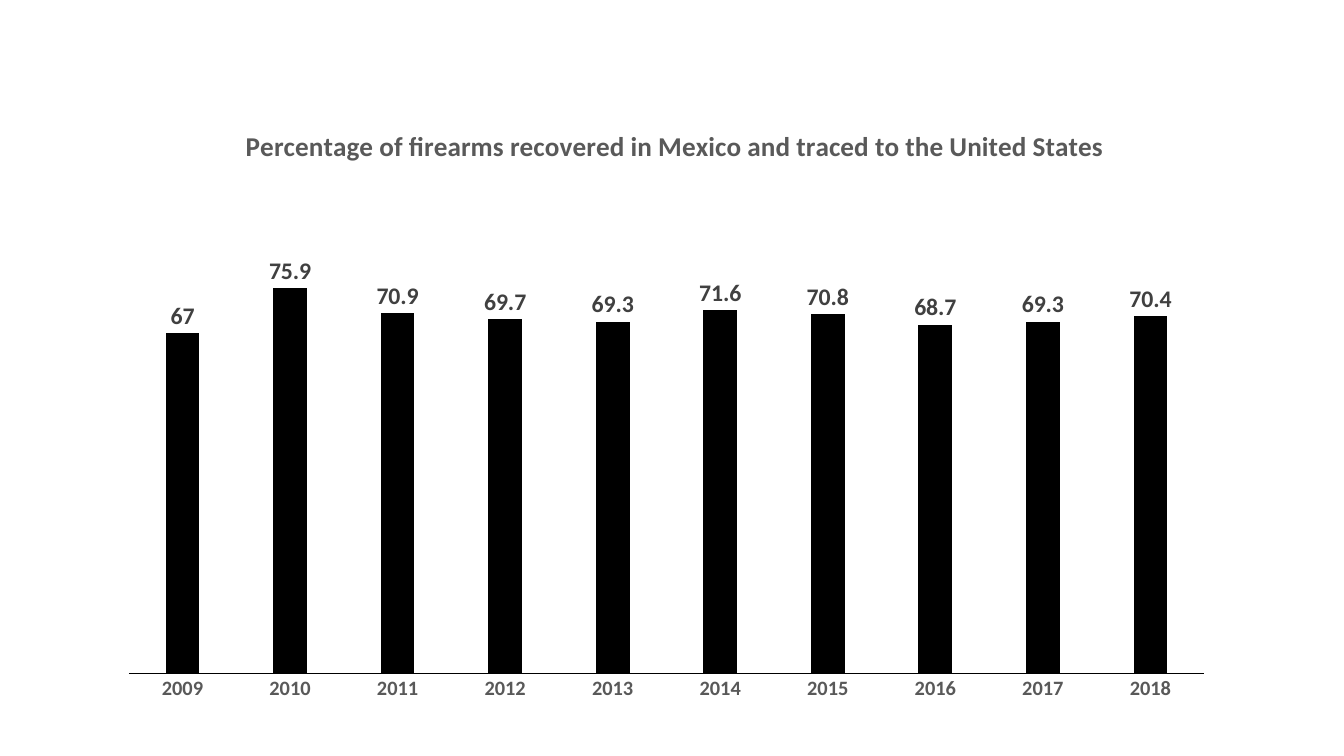
from lxml import etree
from pptx import Presentation
from pptx.chart.data import CategoryChartData
from pptx.dml.color import RGBColor
from pptx.enum.chart import XL_CHART_TYPE, XL_LABEL_POSITION, XL_TICK_LABEL_POSITION, XL_TICK_MARK
from pptx.oxml.ns import qn
from pptx.util import Pt

COLUMNS = XL_CHART_TYPE.COLUMN_CLUSTERED
OUTSIDE_END = XL_LABEL_POSITION.OUTSIDE_END
NO_LABELS = XL_TICK_LABEL_POSITION.NONE
NO_TICKS = XL_TICK_MARK.NONE

TITLE = "Percentage of firearms recovered in Mexico and traced to the United States"
YEARS = [str(year) for year in range(2009, 2019)]
PERCENTAGES = [67, 75.9, 70.9, 69.7, 69.3, 71.6, 70.8, 68.7, 69.3, 70.4]


def color(hex_code):
    return RGBColor.from_string(hex_code)


def style(font, size, hex_code, bold=False):
    font.name = "Calibri"
    font.size = Pt(size)
    font.bold = bold
    font.color.rgb = color(hex_code)


def write(text_frame, text, **font_format):
    text_frame.text = text
    style(text_frame.paragraphs[0].runs[0].font, **font_format)


def set_layout(part, index, **settings):
    for layout in part.findall(qn("c:layout")):
        part.remove(layout)
    layout = etree.Element(qn("c:layout"))
    manual = etree.SubElement(layout, qn("c:manualLayout"))
    for tag, value in settings.items():
        etree.SubElement(manual, qn(f"c:{tag}")).set("val", str(value))
    part.insert(index, layout)


def add_percentage_chart(slide, left, top, width, height):
    chart_data = CategoryChartData()
    chart_data.categories = YEARS
    chart_data.add_series("Series 1", PERCENTAGES)
    chart = slide.shapes.add_chart(
        COLUMNS, Pt(left), Pt(top), Pt(width), Pt(height), chart_data).chart
    chart.has_legend = False
    style(chart.font, 10, "000000")

    title = chart.chart_title
    write(title.text_frame, TITLE, size=32, hex_code="595959", bold=True)
    title.include_in_layout = False
    set_layout(title._element, 1, xMode="edge", yMode="edge", x=0.12, y=0.04)
    set_layout(chart._chartSpace.chart.plotArea, 0, layoutTarget="inner",
               xMode="edge", yMode="edge", x=0.02, y=0.11, w=0.96, h=0.825)

    year_axis = chart.category_axis
    year_axis.major_tick_mark = NO_TICKS
    year_axis.format.line.color.rgb = color("000000")
    year_axis.format.line.width = Pt(0.75)
    style(year_axis.tick_labels.font, 24, "595959", bold=True)

    percent_axis = chart.value_axis
    percent_axis.minimum_scale = 0
    percent_axis.maximum_scale = 100
    percent_axis.major_unit = 20
    percent_axis.has_major_gridlines = False
    percent_axis.tick_label_position = NO_LABELS
    percent_axis.visible = False

    columns = chart.plots[0]
    columns.vary_by_categories = False
    columns.gap_width = 219
    columns.overlap = -27
    column_fill = columns.series[0].format.fill
    column_fill.solid()
    column_fill.fore_color.rgb = color("000000")

    percentages = columns.series[0].data_labels
    percentages.show_value = True
    percentages.position = OUTSIDE_END
    style(percentages.font, 28, "404040", bold=True)


def main():
    presentation = Presentation()
    presentation.slide_width = Pt(1583.28)
    presentation.slide_height = Pt(890.64)
    slide = presentation.slides.add_slide(presentation.slide_layouts[6])
    add_percentage_chart(slide, 125.28, 115.2, 1319.76, 725.76)
    presentation.save("out.pptx")


if __name__ == "__main__":
    main()
